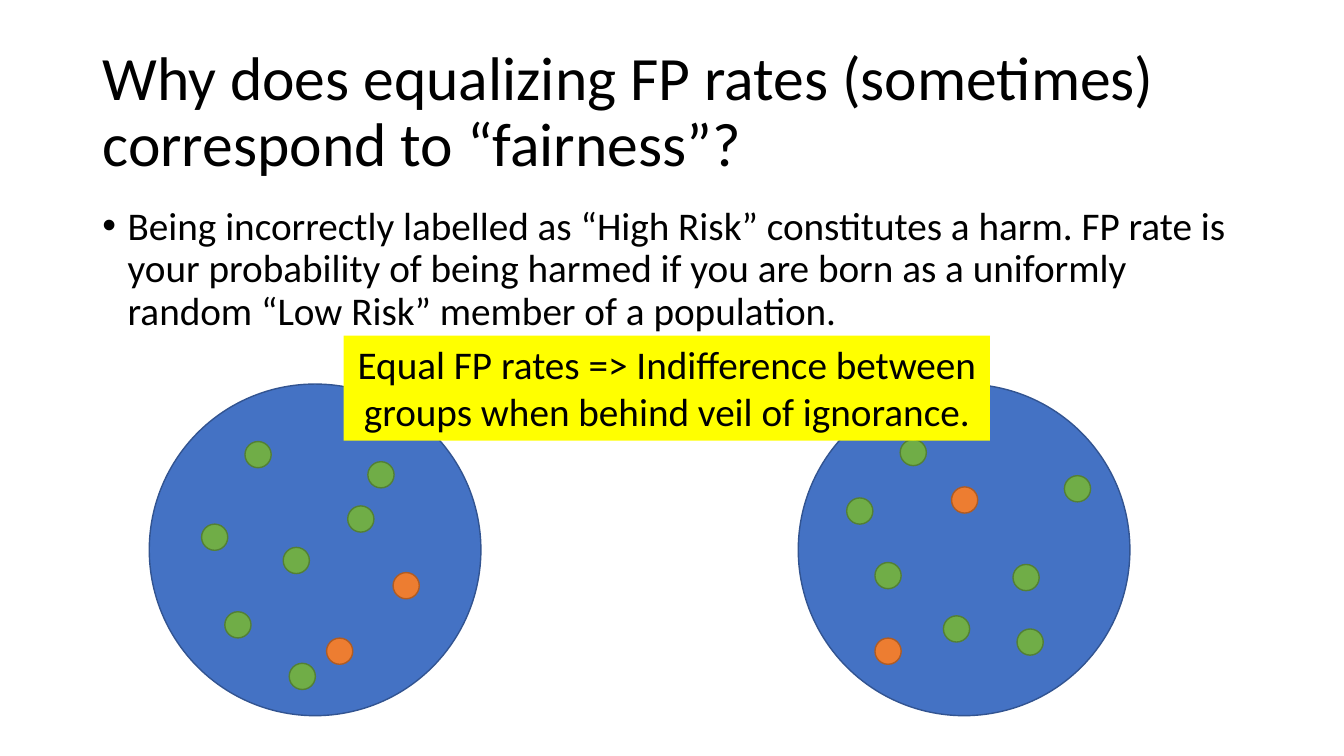
from dataclasses import dataclass

from pptx import Presentation
from pptx.dml.color import RGBColor
from pptx.enum.shapes import MSO_SHAPE
from pptx.enum.text import MSO_ANCHOR, MSO_AUTO_SIZE, PP_ALIGN
from pptx.shapes.autoshape import Shape
from pptx.slide import Slide
from pptx.text.text import TextFrame
from pptx.util import Pt

BLACK = RGBColor(0x00, 0x00, 0x00)
YELLOW = RGBColor(0xFF, 0xFF, 0x00)
BLUE = RGBColor(0x44, 0x72, 0xC4)
DARK_BLUE = RGBColor(0x32, 0x54, 0x91)
GREEN = RGBColor(0x70, 0xAD, 0x47)
DARK_GREEN = RGBColor(0x53, 0x80, 0x35)
ORANGE = RGBColor(0xED, 0x7D, 0x31)
DARK_ORANGE = RGBColor(0xAF, 0x5C, 0x24)

FONT = "Calibri"
POPULATION_TOP = 274.3
POPULATION_SIZE = 236.9
MEMBER_SIZE = 18.7

TITLE = "Why does equalizing FP rates (sometimes) correspond to “fairness”?"
HARM = (
    "Being incorrectly labelled as “High Risk” constitutes a harm. FP rate is "
    "your probability of being harmed if you are born as a uniformly random "
    "“Low Risk” member of a population."
)
CONCLUSION = (
    "Equal FP rates => Indifference between\n"
    "groups when behind veil of ignorance."
)


@dataclass(frozen=True)
class Population:
    """A large circle, with the left and top of each member inside it."""

    left: float
    green_members: tuple[tuple[float, float], ...]
    orange_members: tuple[tuple[float, float], ...]


POPULATIONS = (
    Population(
        106.6,
        ((175, 315.4), (262.8, 329.8), (144, 374.4), (202.3, 391),
         (160.6, 437), (206.6, 473.8), (248.4, 361.4)),
        ((280.8, 409), (233.3, 455.8)),
    ),
    Population(
        570.2,
        ((643, 313.9), (604.8, 355.7), (760.3, 339.8), (625, 401.8),
         (723.6, 403.2), (673.9, 439.9), (726.5, 449.3)),
        ((679.7, 347.8), (625, 455.8)),
    ),
)


def place(shape: Shape, left: float, top: float, width: float, height: float) -> None:
    shape.left, shape.top = Pt(left), Pt(top)
    shape.width, shape.height = Pt(width), Pt(height)


def format_text(frame: TextFrame, size: float, alignment: PP_ALIGN) -> None:
    for para in frame.paragraphs:
        para.alignment = alignment
        for span in para.runs:
            span.font.name = FONT
            span.font.size = Pt(size)
            span.font.color.rgb = BLACK


def add_circle(slide: Slide, left: float, top: float, size: float,
               fill: RGBColor, outline: RGBColor) -> None:
    circle = slide.shapes.add_shape(
        MSO_SHAPE.OVAL, Pt(left), Pt(top), Pt(size), Pt(size))
    circle.shadow.inherit = False
    circle.fill.solid()
    circle.fill.fore_color.rgb = fill
    circle.line.color.rgb = outline
    circle.line.width = Pt(1)


def add_population(slide: Slide, population: Population) -> None:
    add_circle(slide, population.left, POPULATION_TOP, POPULATION_SIZE, BLUE, DARK_BLUE)
    for left, top in population.green_members:
        add_circle(slide, left, top, MEMBER_SIZE, GREEN, DARK_GREEN)
    for left, top in population.orange_members:
        add_circle(slide, left, top, MEMBER_SIZE, ORANGE, DARK_ORANGE)


def fill_title(slide: Slide) -> None:
    title = slide.shapes.title
    place(title, 66, 28.8, 828, 104.4)
    frame = title.text_frame
    frame.text = TITLE
    frame.auto_size = MSO_AUTO_SIZE.NONE
    frame.vertical_anchor = MSO_ANCHOR.MIDDLE
    frame.paragraphs[0].line_spacing = 0.9
    format_text(frame, 44, PP_ALIGN.LEFT)


def fill_body(slide: Slide) -> None:
    body = slide.placeholders[1]
    place(body, 66, 144, 828, 342.7)
    frame = body.text_frame
    frame.text = HARM
    frame.auto_size = MSO_AUTO_SIZE.NONE
    para = frame.paragraphs[0]
    para.line_spacing = 0.9
    para.space_before = Pt(10)
    properties = para._p.get_or_add_pPr()
    properties.set("marL", str(Pt(18)))
    properties.set("indent", str(Pt(-18)))
    format_text(frame, 28, PP_ALIGN.LEFT)


def add_conclusion(slide: Slide) -> None:
    box = slide.shapes.add_textbox(Pt(245.5), Pt(239.8), Pt(461.5), Pt(74.9))
    box.fill.solid()
    box.fill.fore_color.rgb = YELLOW
    frame = box.text_frame
    frame.text = CONCLUSION
    frame.word_wrap = False
    frame.auto_size = MSO_AUTO_SIZE.SHAPE_TO_FIT_TEXT
    format_text(frame, 28, PP_ALIGN.CENTER)


def main() -> None:
    deck = Presentation()
    deck.slide_width, deck.slide_height = Pt(960), Pt(540)
    page = deck.slides.add_slide(deck.slide_layouts[1])
    fill_title(page)
    fill_body(page)
    for population in POPULATIONS:
        add_population(page, population)
    add_conclusion(page)
    deck.save("out.pptx")


if __name__ == "__main__":
    main()
